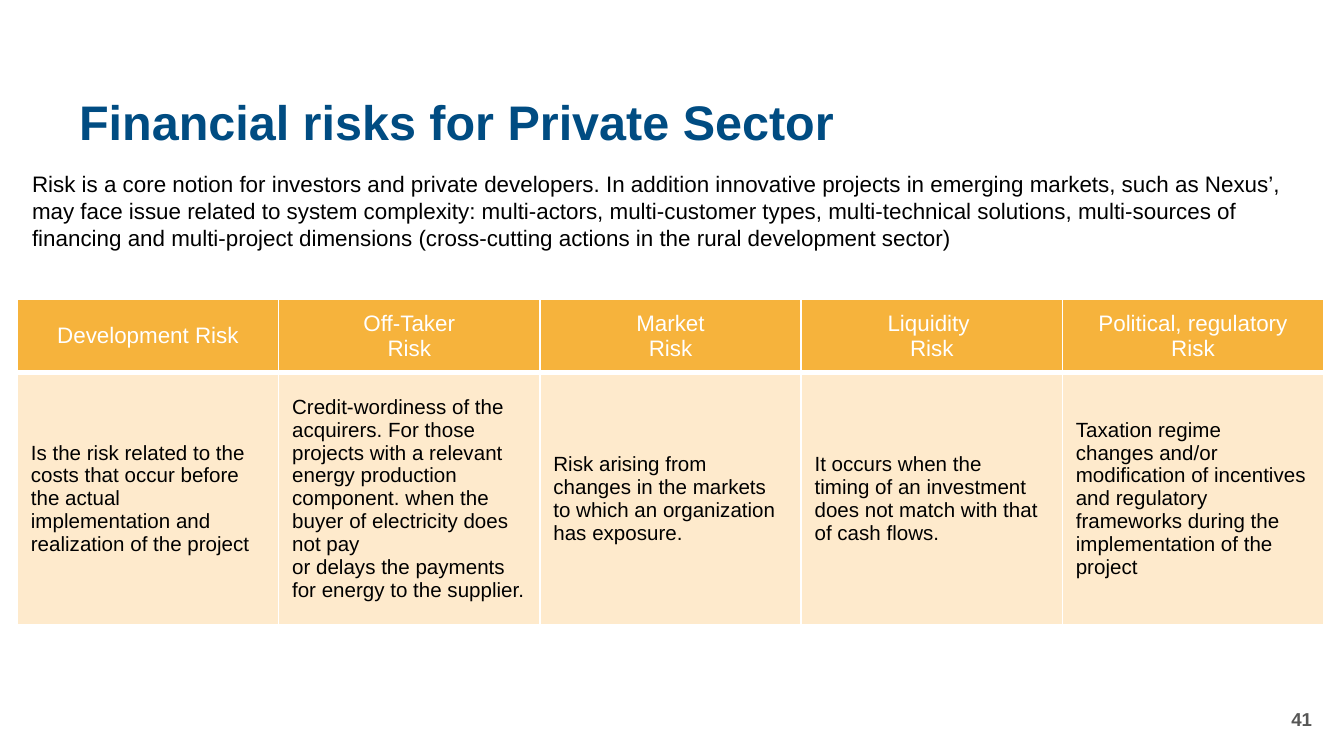
from dataclasses import dataclass

from lxml import etree
from pptx import Presentation
from pptx.dml.color import RGBColor
from pptx.enum import text
from pptx.oxml.ns import qn
from pptx.util import Pt

PX = 9144  # EMU per px, 100 px to the inch
SLIDE_WIDTH = 1000


@dataclass(frozen=True)
class Theme:
    font: str = "Arial"
    title: str = "004C82"
    number: str = "575756"
    body: str = "000000"
    white: str = "FFFFFF"
    header_fill: str = "F6B33C"
    body_fill: str = "FEEACC"
    title_size: int = 26
    text_size: int = 12
    cell_size: int = 11
    number_size: int = 10


THEME = Theme()

INTRO = (
    "Risk is a core notion for investors and private developers. In addition "
    "innovative projects in emerging markets, such as Nexus’, may face issue "
    "related to system complexity: multi-actors, multi-customer types, "
    "multi-technical solutions, multi-sources of financing and multi-project "
    "dimensions (cross-cutting actions in the rural development sector)"
)

# Header and description of each risk
RISKS = [
    ("Development Risk",
     "Is the risk related to the costs that occur before the actual "
     "implementation and realization of the project"),
    ("Off-Taker\nRisk",
     "Credit-wordiness of the acquirers. For those projects with a relevant "
     "energy production component. when the buyer of electricity does not pay\n"
     "or delays the payments for energy to the supplier."),
    ("Market\nRisk",
     "Risk arising from changes in the markets to which an organization has "
     "exposure."),
    ("Liquidity \nRisk",
     "It occurs when the\ntiming of an investment does not match with that of "
     "cash flows."),
    ("Political, regulatory Risk",
     "Taxation regime\nchanges and/or modification of incentives and "
     "regulatory frameworks during the implementation of the project"),
]


def write(frame, content, size, color, bold=False,
          align=text.PP_ALIGN.LEFT, spacing=None):
    frame.text = content
    for paragraph in frame.paragraphs:
        paragraph.alignment = align
        paragraph.line_spacing = spacing
        for run in paragraph.runs:
            run.font.name = THEME.font
            run.font.size = Pt(size)
            run.font.bold = bold
            run.font.color.rgb = RGBColor.from_string(color)


def add_text(slide, box, content, size, color,
             anchor=text.MSO_ANCHOR.MIDDLE, **style):
    shape = slide.shapes.add_textbox(*(length * PX for length in box))
    shape.text_frame.word_wrap = True
    shape.text_frame.vertical_anchor = anchor
    write(shape.text_frame, content, size, color, **style)


def set_borders(cell, widths):
    """Draw white borders; widths maps a side (L, R, T, B) to points."""
    properties = cell._tc.get_or_add_tcPr()
    for index, (side, width) in enumerate(widths.items()):
        line = etree.Element(qn(f"a:ln{side}"), w=str(Pt(width)))
        fill = etree.SubElement(line, qn("a:solidFill"))
        etree.SubElement(fill, qn("a:srgbClr"), val=THEME.white)
        properties.insert(index, line)


def style_cell(cell, content, is_header):
    cell.fill.solid()
    cell.fill.fore_color.rgb = RGBColor.from_string(
        THEME.header_fill if is_header else THEME.body_fill)
    cell.vertical_anchor = text.MSO_ANCHOR.MIDDLE
    if is_header:
        write(cell.text_frame, content, THEME.text_size, THEME.white,
              align=text.PP_ALIGN.CENTER)
    else:
        write(cell.text_frame, content, THEME.cell_size, THEME.body)
    set_borders(cell, {"L": 1, "R": 1, "T": 1 if is_header else 3,
                       "B": 3 if is_header else 1})


def add_risk_table(slide, box, header_height):
    left, top, width, height = (length * PX for length in box)
    table = slide.shapes.add_table(
        2, len(RISKS), left, top, width, height).table
    table.rows[0].height = header_height * PX
    table.rows[1].height = height - header_height * PX
    for column, contents in enumerate(RISKS):
        table.columns[column].width = width // len(RISKS)
        for row, content in enumerate(contents):
            style_cell(table.cell(row, column), content, is_header=row == 0)


def build_risk_slide(presentation):
    slide = presentation.slides.add_slide(presentation.slide_layouts[6])
    # Title
    add_text(slide, (49, 63, 937, 59), "Financial risks for Private Sector",
             THEME.title_size, THEME.title, bold=True, spacing=0.9)
    # Page number
    add_text(slide, (761, 520, 225, 30), "41", THEME.number_size,
             THEME.number, bold=True, align=text.PP_ALIGN.RIGHT)
    # Risk table
    add_risk_table(slide, (13, 223, 972, 242), header_height=54)
    # Introduction
    add_text(slide, (14, 122, 972, 71), INTRO, THEME.text_size, THEME.body,
             anchor=text.MSO_ANCHOR.TOP)


def main():
    presentation = Presentation()
    presentation.slide_width = SLIDE_WIDTH * PX
    presentation.slide_height = SLIDE_WIDTH * PX * 9 // 16
    build_risk_slide(presentation)
    presentation.save("out.pptx")


if __name__ == "__main__":
    main()
